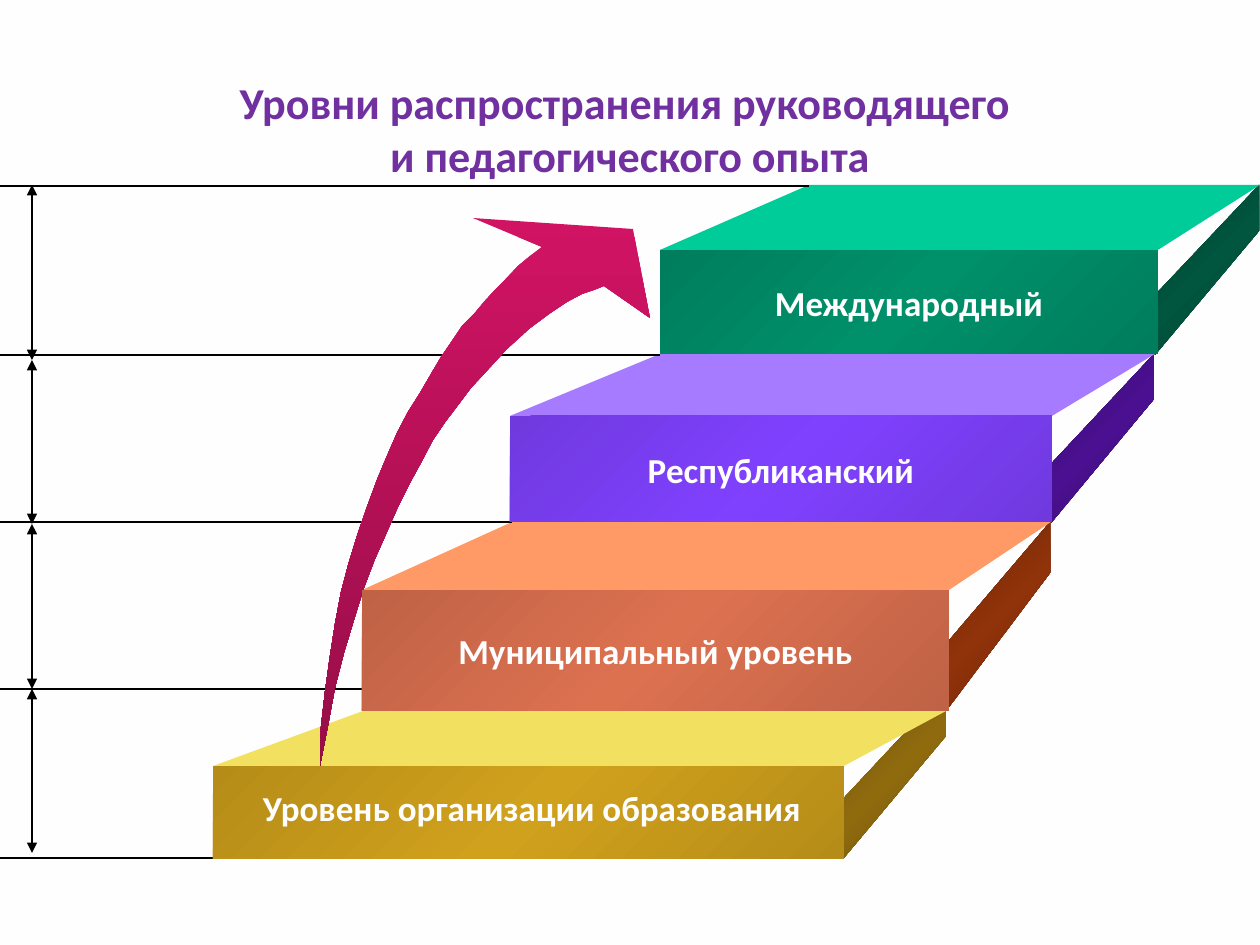
from pptx import Presentation, util as u
from pptx.dml.color import RGBColor
from pptx.enum import shapes as kinds, text as t
from pptx.oxml.ns import qn
from lxml import etree

PX = 914400 / 126
WHITE, BLACK, PURPLE = "FFFEFF", "000000", "7030A0"
FONT = "Calibri"

TITLE = "Уровни распространения руководящего \vи педагогического опыта"

# Stairs from top to bottom. front: left, top, right, bottom;
# tread: back left, back right, back y; side: left, right, then y of
# its right bottom, left bottom, left top, right top
STEPS = [
    dict(label="Международный", front=(660, 250, 1158, 354),
         tread=(809, 1260, 185), side=(1155, 1259, 231, 355, 295, 185),
         colors=("007D5C", "00906A", "00CC99", "003E2D", "00563F")),
    dict(label="Республиканский", front=(510, 416, 1052, 522),
         tread=(660, 1155, 354), side=(1051, 1154, 399, 523, 464, 354),
         colors=("6F39DE", "8041FF", "A77BFF", "360B68", "4B1092")),
    dict(label="Муниципальный уровень", front=(362, 590, 949, 711),
         tread=(512, 1051, 522), side=(946, 1050, 573, 711, 644, 522),
         colors=("BF6246", "DC7150", "FF9966", "672407", "90330A")),
    dict(label="Уровень организации образования", front=(213, 766, 844, 859),
         label_box=(217, 780, 630, 55),
         tread=(363, 946, 711), side=(843, 946, 736, 859, 799, 689),
         colors=("B58C18", "D0A11C", "F2E160", "674D0A", "906B0E")),
]

# Level lines (right end, y) and the ends of the height arrows
LEVELS = [(213, 858), (362, 689), (512, 522), (660, 355), (809, 186)]
HEIGHT_X, HEIGHT_ENDS = 32, [185, 360, 524, 689, 853]

# Rising arrow: outer edge, head, inner edge
RISE = [(320, 766), (321, 727), (325, 692), (330, 656), (335, 624), (341, 592),
        (349, 562), (358, 533), (367, 507), (377, 480), (387, 456), (397, 433),
        (408, 412), (420, 393), (431, 374), (441, 357), (452, 341), (462, 326),
        (474, 314), (484, 302), (494, 291), (503, 282), (518, 266), (530, 256),
        (542, 247),
        (473, 218), (633, 229), (650, 318), (604, 286),
        (594, 290), (582, 294), (567, 302), (549, 314), (529, 329), (507, 349),
        (484, 374), (471, 388), (459, 404), (446, 421), (433, 440), (422, 461),
        (410, 483), (398, 507), (387, 532), (375, 559), (364, 588), (354, 620),
        (344, 653), (335, 688), (328, 726)]


def px(*values):
    return [u.Emu(round(v * PX)) for v in values]


def rgb(code):
    return RGBColor.from_string(code)


def paint(shape, colors, angle=45):
    """One colour gives a solid fill, more give evenly spaced gradient stops."""
    shape.shadow.inherit = False
    shape.line.fill.background()
    if len(colors) == 1:
        shape.fill.solid()
        shape.fill.fore_color.rgb = rgb(colors[0])
        return
    shape.fill.gradient()
    shape.fill.gradient_angle = 360 - angle
    stops = next(shape.element.iter(qn("a:gsLst")))
    for stop in list(stops):
        stops.remove(stop)
    for i, code in enumerate(colors):
        pos = str(100000 * i // (len(colors) - 1))
        stop = etree.SubElement(stops, qn("a:gs"), pos=pos)
        etree.SubElement(stop, qn("a:srgbClr"), val=code)


def polygon(points, colors, angle=45):
    builder = slide.shapes.build_freeform(*points[0], scale=PX)
    builder.add_line_segments(points[1:], close=True)
    paint(builder.convert_to_shape(), colors, angle)


def line(x1, y1, x2, y2, arrows=False):
    rule = slide.shapes.add_connector(
        kinds.MSO_CONNECTOR.STRAIGHT, *px(x1, y1, x2, y2))
    rule.line.color.rgb = rgb(BLACK)
    rule.line.width = u.Pt(0.75)
    if arrows:
        ln = rule.line._get_or_add_ln()
        for end in ("a:headEnd", "a:tailEnd"):
            etree.SubElement(ln, qn(end), type="triangle")
    etree.SubElement(rule.element.spPr, qn("a:effectLst"))


def write(shape, words, size, color, wrap):
    frame = shape.text_frame
    frame.text = words
    frame.word_wrap = wrap
    frame.vertical_anchor = t.MSO_ANCHOR.MIDDLE
    par = frame.paragraphs[0]
    par.alignment = t.PP_ALIGN.CENTER
    par.font.name, par.font.size, par.font.bold = FONT, u.Pt(size), True
    par.font.color.rgb = rgb(color)
    return frame


deck = Presentation()
deck.slide_width, deck.slide_height = px(1260, 945)
slide = deck.slides.add_slide(deck.slide_layouts[6])
slide.background.fill.solid()
slide.background.fill.fore_color.rgb = rgb(WHITE)

# Title, set a little low in its box
title = slide.shapes.add_textbox(*px(63, 38, 1134, 157))
write(title, TITLE, 25.2, PURPLE, True).margin_top = px(30)[0]

# Sides and treads
for step in STEPS:
    _, _, tread_color, edge, middle = step["colors"]
    left, right, right_low, left_low, left_high, right_high = step["side"]
    polygon([(right, right_low), (left, left_low), (left, left_high),
             (right, right_high)], [edge, middle, edge])
    front_left, front_top, front_right, _ = step["front"]
    back_left, back_right, back_y = step["tread"]
    polygon([(front_right, front_top), (front_left, front_top),
             (back_left, back_y), (back_right, back_y)], [tread_color])

# Level lines and height arrows
for right, y in LEVELS:
    line(right, y, 0, y)
for top, bottom in zip(HEIGHT_ENDS, HEIGHT_ENDS[1:]):
    line(HEIGHT_X, top, HEIGHT_X, bottom, arrows=True)

# Rising arrow
polygon(RISE, ["D11364", "960E48"], angle=90)

# Fronts with their labels
for step in STEPS:
    left, top, right, bottom = step["front"]
    edge, middle = step["colors"][:2]
    front = slide.shapes.add_shape(
        kinds.MSO_SHAPE.RECTANGLE, *px(left, top, right - left, bottom - top))
    paint(front, [edge, middle, edge])
    own_box = step.get("label_box")
    label = slide.shapes.add_textbox(*px(*own_box)) if own_box else front
    write(label, step["label"], 20, WHITE, bool(own_box))

deck.save("out.pptx")
